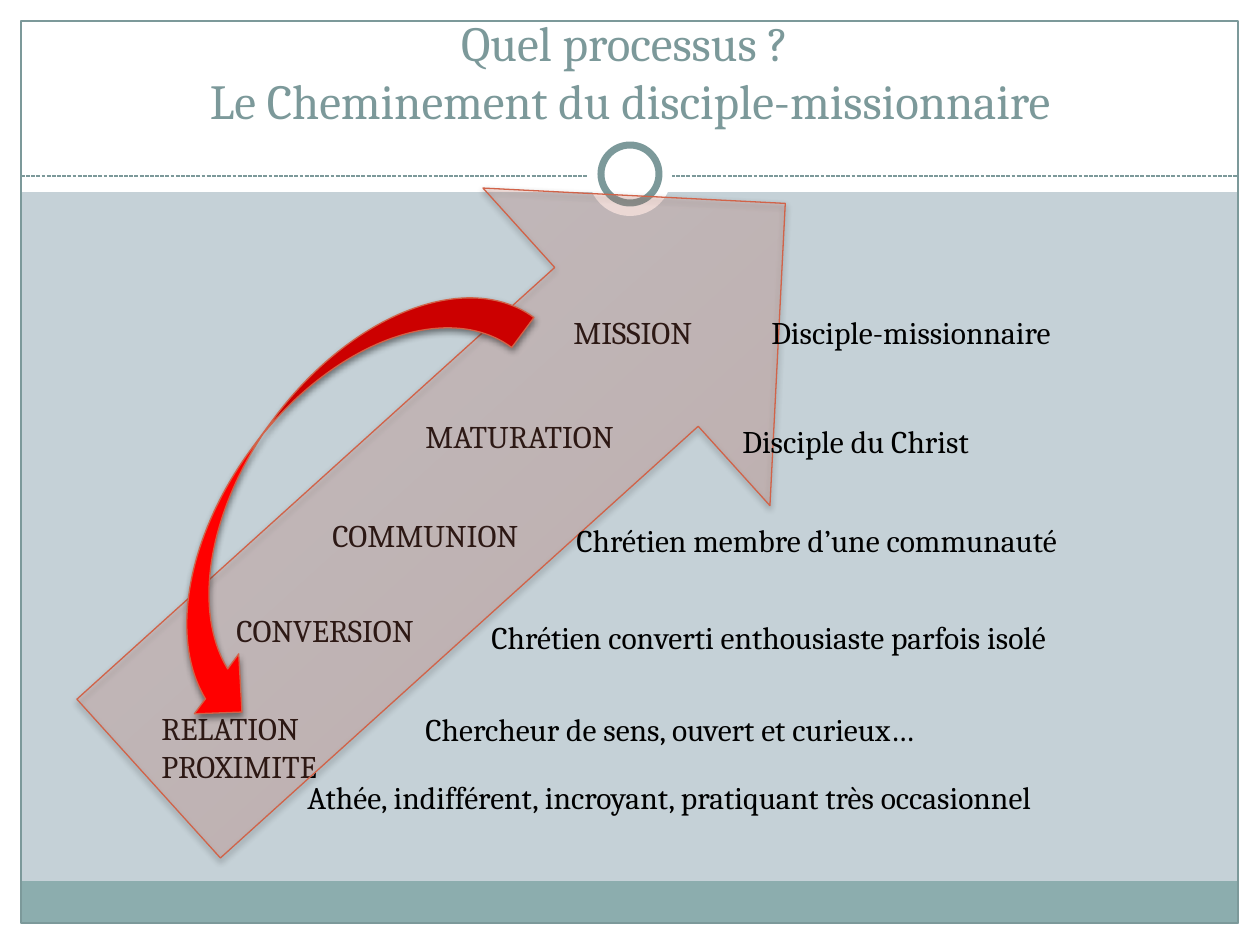
from dataclasses import dataclass
from typing import Optional

from lxml.etree import SubElement
from pptx import Presentation
from pptx.dml.color import RGBColor
from pptx.enum.dml import MSO_LINE_DASH_STYLE as Dash
from pptx.enum.shapes import MSO_CONNECTOR as Connector, MSO_SHAPE as Shape
from pptx.enum.text import MSO_ANCHOR as Anchor, PP_ALIGN as Align
from pptx.oxml.ns import qn
from pptx.util import Pt

EMU_PER_PX = 914400 / 126


def px(length: int) -> int:
    return round(length * EMU_PER_PX)


@dataclass(frozen=True)
class Theme:
    font: str = "Cambria"
    title_size: int = 28
    label_size: int = 18
    thin: float = 0.75
    ring: float = 4
    background: str = "C5D1D7"
    white: str = "FFFFFF"
    black: str = "000000"
    slate: str = "7C999A"
    footer: str = "8CADAE"
    rust: str = "D16349"
    red: str = "FF0000"
    path_start: str = "E55635"
    path_end: str = "FFB5AC"
    path_opacity: int = 18
    shadow_opacity: int = 45


THEME = Theme()


@dataclass(frozen=True)
class Block:
    left: int
    top: int
    width: int
    height: int
    fill: Optional[str] = None
    line: Optional[str] = None
    line_width: float = THEME.thin
    kind: Shape = Shape.RECTANGLE
    rotation: float = 0


@dataclass(frozen=True)
class Label:
    left: int
    top: int
    width: int
    lines: tuple[str, ...]


# Decor: white margins, footer band, frame; then the ring over the dashed line
FRAME = [
    Block(0, 924, 1260, 21, THEME.white),
    Block(0, 0, 1260, 192, THEME.white),
    Block(0, 0, 21, 945, THEME.white),
    Block(1239, 0, 21, 945, THEME.white),
    Block(21, 881, 1217, 43, THEME.footer),
    Block(21, 21, 1217, 902, line=THEME.slate),
]
RING = [
    Block(588, 132, 84, 84, THEME.white, kind=Shape.OVAL),
    Block(601, 145, 58, 58, THEME.white, THEME.slate, THEME.ring, Shape.OVAL),
]
PATH_ARROW = Block(38, 277, 858, 428, THEME.path_start, THEME.rust,
                   kind=Shape.RIGHT_ARROW, rotation=317.9)
RETURN_ARROW = Block(53, 411, 528, 149, THEME.red, THEME.rust,
                     kind=Shape.CURVED_UP_ARROW, rotation=126.5)

# Labels behind the path arrow, and the people described in front of it
STEPS = [
    Label(295, 772, 832, ("Athée, indifférent, incroyant, pratiquant très occasionnel",)),
    Label(149, 703, 213, ("RELATION", "PROXIMITE")),
    Label(224, 605, 252, ("CONVERSION",)),
    Label(320, 510, 252, ("COMMUNION",)),
    Label(413, 411, 252, ("MATURATION",)),
    Label(561, 307, 252, ("MISSION",)),
]
PEOPLE = [
    Label(759, 307, 507, ("Disciple-missionnaire",)),
    Label(730, 416, 507, ("Disciple du Christ",)),
    Label(564, 515, 571, ("Chrétien membre d’une communauté",)),
    Label(479, 612, 738, ("Chrétien converti enthousiaste parfois isolé",)),
    Label(413, 704, 571, ("Chercheur de sens, ouvert et curieux…",)),
]


def rgb(value: str) -> RGBColor:
    return RGBColor.from_string(value)


def add_block(slide, block: Block):
    shape = slide.shapes.add_shape(block.kind, px(block.left), px(block.top),
                                   px(block.width), px(block.height))
    shape.shadow.inherit = False
    shape.rotation = block.rotation
    if block.fill:
        shape.fill.solid()
        shape.fill.fore_color.rgb = rgb(block.fill)
    else:
        shape.fill.background()
    if block.line:
        shape.line.color.rgb = rgb(block.line)
        shape.line.width = Pt(block.line_width)
    else:
        shape.line.fill.background()
    return shape


def add_alpha(color, percent: int) -> None:
    SubElement(color, qn("a:alpha"), val=str(percent * 1000))


def add_shadow(shape) -> None:
    effects = shape._element.spPr.find(qn("a:effectLst"))
    shadow = SubElement(effects, qn("a:outerShdw"), blurRad=str(Pt(4)),
                        dist=str(Pt(2)), dir="5400000", rotWithShape="0")
    add_alpha(SubElement(shadow, qn("a:srgbClr"), val=THEME.black),
              THEME.shadow_opacity)


def fill_path(shape) -> None:
    shape.fill.gradient()
    shape.fill.gradient_angle = 90
    for stop, color in zip(shape.fill.gradient_stops,
                           (THEME.path_start, THEME.path_end)):
        stop.color.rgb = rgb(color)
    for color in shape._element.spPr.find(qn("a:gradFill")).iter(qn("a:srgbClr")):
        add_alpha(color, THEME.path_opacity)


def add_divider(slide) -> None:
    line = slide.shapes.add_connector(Connector.STRAIGHT, px(21), px(176),
                                      px(1239), px(176))
    line.line.color.rgb = rgb(THEME.slate)
    line.line.width = Pt(THEME.thin)
    line.line.dash_style = Dash.SQUARE_DOT
    SubElement(line._element.spPr, qn("a:effectLst"))


def add_run(paragraph, text: str, size: int, color: str) -> None:
    run = paragraph.add_run()
    run.text = text
    run.font.name = THEME.font
    run.font.size = Pt(size)
    run.font.color.rgb = rgb(color)


def add_frame(slide, left: int, top: int, width: int, height: int):
    box = slide.shapes.add_textbox(px(left), px(top), px(width), px(height))
    box.text_frame.word_wrap = True
    return box.text_frame


def add_title(slide) -> None:
    frame = add_frame(slide, 42, 32, 1176, 104)
    frame.vertical_anchor = Anchor.BOTTOM
    paragraph = frame.paragraphs[0]
    paragraph.alignment = Align.CENTER
    add_run(paragraph, "Quel processus ? ", THEME.title_size, THEME.slate)
    paragraph.add_line_break()
    add_run(paragraph, "Le Cheminement du disciple-missionnaire",
            THEME.title_size, THEME.slate)


def add_label(slide, label: Label) -> None:
    frame = add_frame(slide, label.left, label.top, label.width,
                      12 + 38 * len(label.lines))
    for index, text in enumerate(label.lines):
        paragraph = frame.add_paragraph() if index else frame.paragraphs[0]
        add_run(paragraph, text, THEME.label_size, THEME.black)


def main() -> None:
    presentation = Presentation()
    presentation.slide_width, presentation.slide_height = px(1260), px(945)
    slide = presentation.slides.add_slide(presentation.slide_layouts[6])
    slide.background.fill.solid()
    slide.background.fill.fore_color.rgb = rgb(THEME.background)

    for block in FRAME:
        add_block(slide, block)
    add_divider(slide)
    for block in RING:
        add_block(slide, block)
    add_title(slide)
    for label in STEPS:
        add_label(slide, label)

    path_arrow = add_block(slide, PATH_ARROW)
    fill_path(path_arrow)
    return_arrow = add_block(slide, RETURN_ARROW)
    for arrow in (path_arrow, return_arrow):
        add_shadow(arrow)
    for label in PEOPLE:
        add_label(slide, label)
    presentation.save("out.pptx")


if __name__ == "__main__":
    main()
